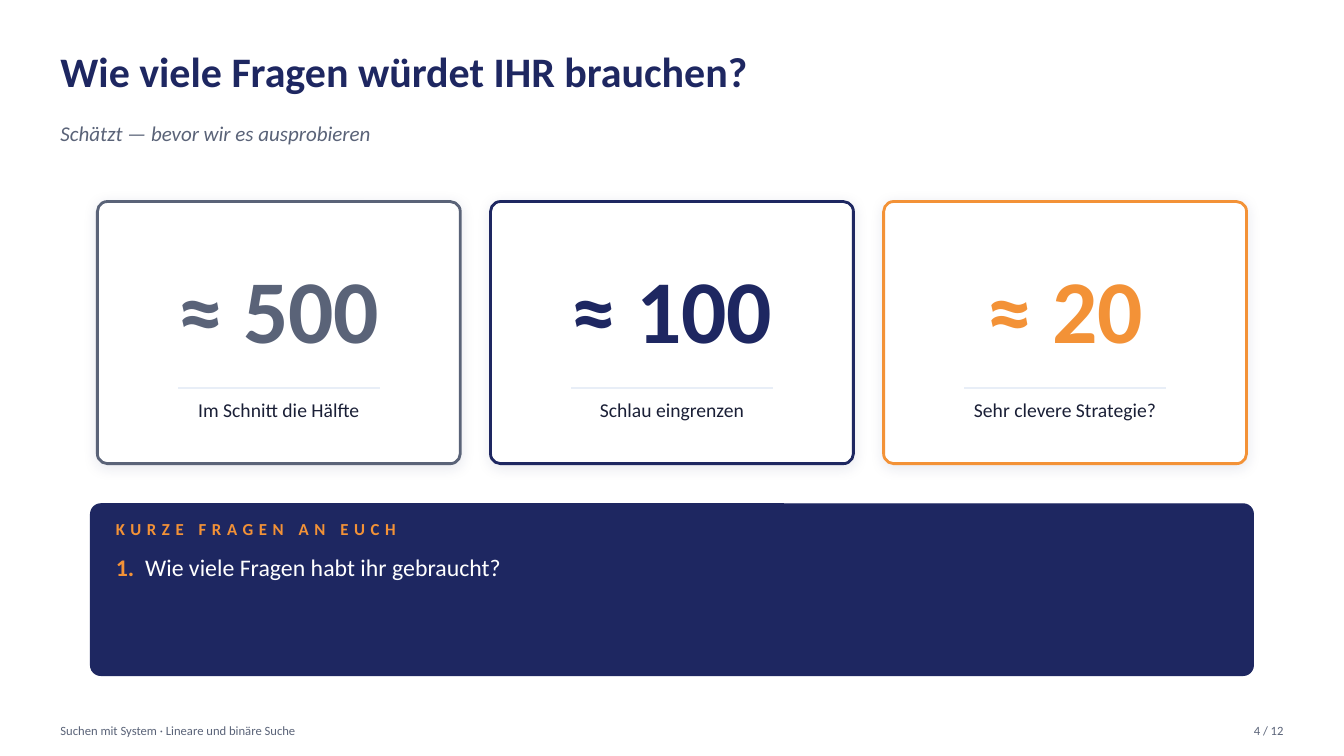
"""Builds the estimate slide: three guess cards above a question panel."""
from dataclasses import dataclass

from lxml import etree
from pptx import Presentation
from pptx.dml.color import RGBColor
from pptx.enum.shapes import MSO_CONNECTOR, MSO_SHAPE
from pptx.enum.text import MSO_ANCHOR, PP_ALIGN
from pptx.oxml.ns import qn
from pptx.util import Inches, Pt

ROUND = MSO_SHAPE.ROUNDED_RECTANGLE
STRAIGHT = MSO_CONNECTOR.STRAIGHT
TOP, MIDDLE = MSO_ANCHOR.TOP, MSO_ANCHOR.MIDDLE
LEFT, CENTER, RIGHT = PP_ALIGN.LEFT, PP_ALIGN.CENTER, PP_ALIGN.RIGHT
CELL = 0.1
COLS, ROWS = 133.33, 75


@dataclass(frozen=True)
class Theme:
    """Font, colours and type sizes."""
    font: str = "Calibri"
    navy: str = "1E2761"
    gray: str = "5A6378"
    orange: str = "F39237"
    ink: str = "1A1F36"
    pale: str = "E8EEF7"
    white: str = "FFFFFF"
    title: int = 30
    lead: int = 15
    figure: int = 64
    label: int = 14
    head: int = 12
    ask: int = 17
    foot: int = 9


class Deck:
    """Draws styled elements on a grid of tenth-inch cells."""

    def __init__(self, theme):
        self.theme = theme
        self.file = Presentation()
        self.file.slide_width = self.grid(COLS)
        self.file.slide_height = self.grid(ROWS)
        self.slide = self.file.slides.add_slide(self.file.slide_layouts[6])

    def grid(self, cells):
        """Turn grid cells into a length."""
        return Inches(cells * CELL)

    def style(self, run, size, color, bold=False, italic=False):
        """Format one run."""
        font = run.font
        font.name, font.size = self.theme.font, Pt(size)
        font.bold, font.italic = bold, italic
        font.color.rgb = RGBColor.from_string(color)

    def text(self, area, words, size, color, align=LEFT, anchor=TOP, **face):
        """Add a text box without insets and return its frame."""
        frame = self.slide.shapes.add_textbox(*map(self.grid, area)).text_frame
        frame.word_wrap = True
        frame.vertical_anchor = anchor
        frame.margin_left = frame.margin_right = 0
        frame.margin_top = frame.margin_bottom = 0
        frame.text = words
        par = frame.paragraphs[0]
        par.alignment = align
        self.style(par.runs[0], size, color, **face)
        return frame

    def box(self, area, fill, edge, width, bend):
        """Add a rounded box without shadow."""
        box = self.slide.shapes.add_shape(ROUND, *map(self.grid, area))
        box.adjustments[0] = bend
        box.fill.solid()
        box.fill.fore_color.rgb = RGBColor.from_string(fill)
        box.line.color.rgb = RGBColor.from_string(edge)
        box.line.width = Pt(width)
        box.shadow.inherit = False
        return box

    def shade(self, box):
        """Give a box a soft shadow below."""
        glow = box._element.spPr.find(qn("a:effectLst"))
        cast = etree.SubElement(
            glow, qn("a:outerShdw"), blurRad=str(Pt(10)), dist=str(Pt(2)),
            dir="5400000", algn="bl", rotWithShape="0")
        tint = etree.SubElement(cast, qn("a:srgbClr"), val=self.theme.navy)
        etree.SubElement(tint, qn("a:alpha"), val="10000")

    def rule(self, left, top, width):
        """Add a thin level line."""
        ends = map(self.grid, (left, top, left + width, top))
        rule = self.slide.shapes.add_connector(STRAIGHT, *ends)
        rule.line.color.rgb = RGBColor.from_string(self.theme.pale)
        rule.line.width = Pt(1)
        etree.SubElement(rule._element.spPr, qn("a:effectLst"))

    def card(self, left, top, wide, high, figure, label, color):
        """Add a card with a large figure, a rule and a label."""
        look = self.theme
        self.shade(self.box((left, top, wide, high), look.white, color, 2, 0.038))
        self.text((left, top + 4, wide, 13), figure, look.figure, color,
                  CENTER, MIDDLE, bold=True)
        self.rule(left + 8, top + 18.5, wide - 16)
        self.text((left + 2, top + 19.5, wide - 4, 5), label, look.label,
                  look.ink, CENTER)

    def panel(self, left, top, high, head, asks):
        """Add the panel with a spaced heading and numbered questions."""
        look = self.theme
        wide = COLS - 2 * left
        self.box((left, top, wide, high), look.navy, look.navy, 1, 0.059)
        frame = self.text((left + 2.5, top + 1.5, wide - 5, high - 2), head,
                          look.head, look.orange, bold=True)
        frame.paragraphs[0].runs[0]._r.get_or_add_rPr().set("spc", "400")
        for rank, ask in enumerate(asks, 1):
            par = frame.add_paragraph()
            par.text = f"{rank}."
            par.add_run().text = f"\t{ask}"
            par.space_before = Pt(9.8)
            step = str(self.grid(2.9))
            props = par._p.get_or_add_pPr()
            props.set("marL", step)
            props.set("indent", f"-{step}")
            tabs = etree.SubElement(props, qn("a:tabLst"))
            etree.SubElement(tabs, qn("a:tab"), pos=step, algn="l")
            self.style(par.runs[0], look.ask, look.orange, bold=True)
            self.style(par.runs[1], look.ask, look.white)


def main():
    """Compose the slide and save it."""
    look = Theme()
    deck = Deck(look)
    edge = 6
    span = COLS - 2 * edge
    deck.text((edge, 4.5, span, 7.5), "Wie viele Fragen würdet IHR brauchen?",
              look.title, look.navy, bold=True)
    deck.text((edge, 12, span, 4), "Schätzt — bevor wir es ausprobieren",
              look.lead, look.gray, italic=True)

    cards = [
        ("≈ 500", "Im Schnitt die Hälfte", look.gray),
        ("≈ 100", "Schlau eingrenzen", look.navy),
        ("≈ 20", "Sehr clevere Strategie?", look.orange),
    ]
    wide, gap = 36, 3
    start = (COLS - len(cards) * wide - (len(cards) - 1) * gap) / 2
    for spot, card in enumerate(cards):
        deck.card(start + spot * (wide + gap), 20, wide, 26, *card)

    deck.panel(9, 50, 17, "KURZE FRAGEN AN EUCH",
               ["Wie viele Fragen habt ihr gebraucht?"])
    deck.text((edge, 71, 80, 3), "Suchen mit System · Lineare und binäre Suche",
              look.foot, look.gray, anchor=MIDDLE)
    deck.text((COLS - edge - 8, 71, 8, 3), "4 / 12", look.foot, look.gray,
              RIGHT, MIDDLE)
    deck.file.save("out.pptx")


if __name__ == "__main__":
    main()
